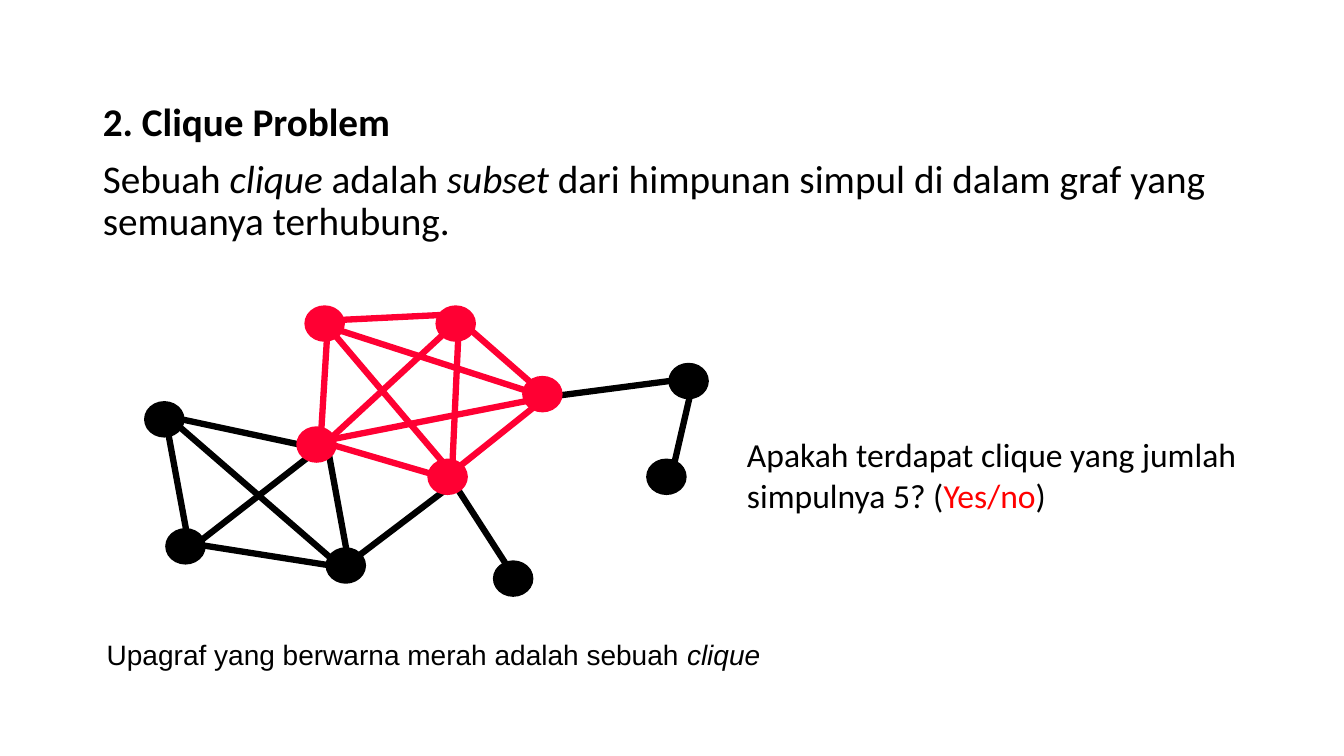
from pptx import Presentation
from pptx import util as u
from pptx.dml.color import RGBColor
from pptx.enum import shapes, text
from pptx.oxml.ns import qn
from lxml import etree

EMU_PER_PX = 9144  # 100 px to the inch
BLACK, CLIQUE_RED, ANSWER_RED = "000000", "FF0033", "FF0000"

# Each paragraph is a list of runs: (text, style)
DEFINITION = [
    [("2. Clique Problem", "bold")],
    [("Sebuah ", ""), ("clique ", "italic"), ("adalah ", ""), ("subset ", "italic"),
     ("dari himpunan simpul di dalam graf yang semuanya terhubung.", "")],
]
CAPTION = [[("Upagraf yang berwarna merah adalah sebuah ", ""), ("clique", "italic")]]
QUESTION = [
    [("Apakah terdapat clique yang jumlah", "")],
    [("simpulnya 5? (", ""), ("Yes/no", "answer"), (")", "")],
]

# Left and top of every vertex
NODE_WIDTH, NODE_HEIGHT = 36, 32
OUTER_NODES = [(145, 400), (491, 558), (643, 457), (665, 362), (166, 526), (325, 545)]
CLIQUE_NODES = [(304, 305), (434, 305), (426, 457), (520, 375), (296, 425)]

# Start x, start y, end x, end y of every edge
OUTER_EDGES = [
    (166, 425, 188, 544), (188, 545, 318, 444), (325, 444, 347, 564),
    (455, 476, 347, 558), (448, 476, 513, 577), (687, 381, 665, 476),
    (687, 375, 542, 394), (166, 413, 340, 564), (311, 444, 166, 413),
    (188, 539, 347, 564),
]
CLIQUE_EDGES = [
    (325, 324, 318, 438), (448, 476, 318, 438), (455, 324, 448, 476),
    (463, 324, 535, 387), (448, 312, 325, 318), (448, 324, 318, 444),
    (325, 324, 448, 469), (542, 394, 448, 469), (542, 394, 325, 324),
    (318, 438, 542, 394),
]


def px(*lengths):
    return [u.Emu(length * EMU_PER_PX) for length in lengths]


def rgb(value):
    return RGBColor.from_string(value)


def write(frame, paragraphs, font_name, size):
    for index, runs in enumerate(paragraphs):
        paragraph = frame.paragraphs[0] if index == 0 else frame.add_paragraph()
        paragraph.font.name = font_name
        paragraph.font.size = u.Pt(size)
        paragraph.font.color.rgb = rgb(BLACK)
        for words, style in runs:
            run = paragraph.add_run()
            run.text = words
            if style == "bold":
                run.font.bold = True
            elif style == "italic":
                run.font.italic = True
            elif style == "answer":
                run.font.color.rgb = rgb(ANSWER_RED)


def add_label(slide, box, paragraphs, font_name, size):
    frame = slide.shapes.add_textbox(*px(*box)).text_frame
    frame.word_wrap = False
    frame.auto_size = text.MSO_AUTO_SIZE.SHAPE_TO_FIT_TEXT
    write(frame, paragraphs, font_name, size)


def add_definition(slide):
    body = slide.placeholders[1]
    body.left, body.top, body.width, body.height = px(92, 97, 1150, 576)
    frame = body.text_frame
    frame.auto_size = text.MSO_AUTO_SIZE.NONE
    frame.vertical_anchor = text.MSO_ANCHOR.TOP
    frame.add_paragraph()
    for paragraph, runs in zip(frame.paragraphs, DEFINITION):
        properties = paragraph._p.get_or_add_pPr()
        properties.set("marL", "0")
        properties.set("indent", "0")
        etree.SubElement(properties, qn("a:buNone"))
        paragraph.line_spacing = 0.9
        paragraph.space_before = u.Pt(0 if runs is DEFINITION[0] else 10)
        font = paragraph.font
        font.name, font.size = "Calibri", u.Pt(28)
        font.color.rgb = rgb(BLACK)
        for words, style in runs:
            run = paragraph.add_run()
            run.text = words
            run.font.bold = style == "bold"
            run.font.italic = style == "italic"


def add_edge(slide, ends, color):
    edge = slide.shapes.add_connector(shapes.MSO_CONNECTOR.STRAIGHT, *px(*ends))
    edge.line.color.rgb = rgb(color)
    edge.line.width = u.Pt(4.5)
    etree.SubElement(edge._element.spPr, qn("a:effectLst"))


def add_node(slide, corner, color):
    node = slide.shapes.add_shape(
        shapes.MSO_SHAPE.OVAL, *px(*corner, NODE_WIDTH, NODE_HEIGHT))
    node.shadow.inherit = False
    node.fill.solid()
    node.fill.fore_color.rgb = rgb(color)
    node.line.color.rgb = rgb(color)
    node.line.width = u.Pt(3)


def main():
    deck = Presentation()
    deck.slide_width, deck.slide_height = px(1333, 750)
    slide = deck.slides.add_slide(deck.slide_layouts[1])
    title = slide.shapes.title._element
    title.getparent().remove(title)

    add_definition(slide)
    graph = [(OUTER_EDGES, OUTER_NODES, BLACK), (CLIQUE_EDGES, CLIQUE_NODES, CLIQUE_RED)]
    for edges, nodes, color in graph:
        for ends in edges:
            add_edge(slide, ends, color)
        for corner in nodes:
            add_node(slide, corner, color)
    add_label(slide, (96, 628, 673, 44), CAPTION, "Arial", 20)
    add_label(slide, (731, 426, 518, 91), QUESTION, "Calibri", 24)
    deck.save("out.pptx")


if __name__ == "__main__":
    main()
